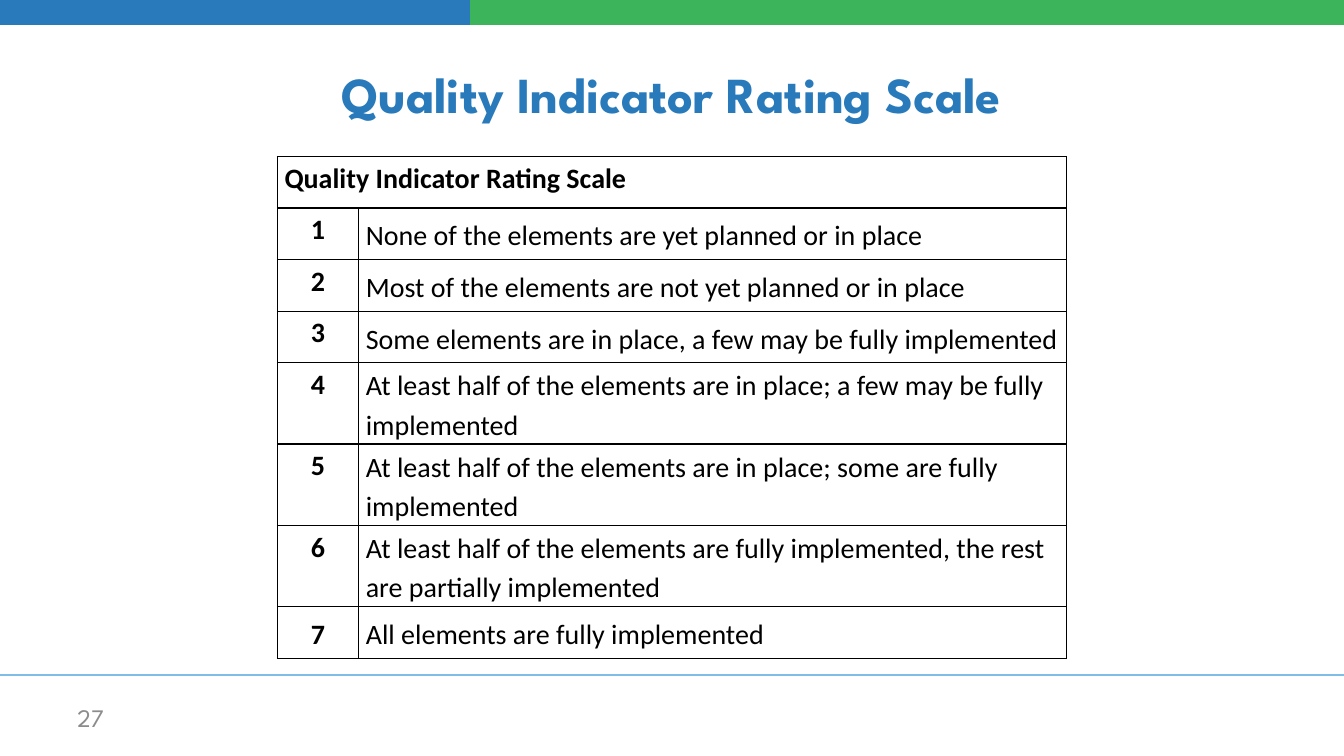
from dataclasses import dataclass

from lxml import etree
from pptx import Presentation
from pptx.dml.color import RGBColor
from pptx.enum import shapes, text
from pptx.oxml import ns
from pptx.util import Cm, Pt


@dataclass(frozen=True)
class Theme:
    blue: str = "297ABB"
    green: str = "3CB45C"
    rule: str = "7FBCE7"
    grey: str = "8C8C8C"
    ink: str = "000000"
    paper: str = "FFFFFF"
    display: str = "League Spartan"
    body: str = "Calibri"
    title_size: int = 36
    table_size: int = 20
    number_size: int = 18


THEME = Theme()
SLIDE_WIDTH, SLIDE_HEIGHT = 33.87, 19.05
HEADING = "Quality Indicator Rating Scale"
RATINGS = [
    "None of the elements are yet planned or in place",
    "Most of the elements are not yet planned or in place",
    "Some elements are in place, a few may be fully implemented",
    "At least half of the elements are in place; a few may be fully implemented",
    "At least half of the elements are in place; some are fully implemented",
    "At least half of the elements are fully implemented, the rest are partially implemented",
    "All elements are fully implemented",
]
TWO_LINE_RATINGS = (4, 5, 6)
COLUMN_WIDTHS = (2.05, 17.84)
SINGLE_ROW, DOUBLE_ROW = 1.3, 2.05


def rgb(colour):
    return RGBColor.from_string(colour)


def add_run(paragraph, words, font, size, colour, bold=False):
    run = paragraph.add_run()
    run.text = words
    run.font.name = font
    run.font.size = Pt(size)
    run.font.bold = bold
    run.font.color.rgb = rgb(colour)


def add_band(slide, left, width, colour):
    """Add a band that bleeds over the top edge of the slide."""
    band = slide.shapes.add_shape(
        shapes.MSO_SHAPE.RECTANGLE, Cm(left), Cm(-3.18), Cm(width), Cm(3.81))
    band.shadow.inherit = False
    band.fill.solid()
    band.fill.fore_color.rgb = rgb(colour)
    band.line.fill.background()


def add_rule(slide, start, end, y):
    rule = slide.shapes.add_connector(
        shapes.MSO_CONNECTOR.STRAIGHT, Cm(start), Cm(y), Cm(end), Cm(y))
    rule.line.color.rgb = rgb(THEME.rule)
    rule.line.width = Pt(1.5)
    etree.SubElement(rule._element.spPr, ns.qn("a:effectLst"))


def add_label(slide, box, words, size, colour, align, bold=False):
    frame = slide.shapes.add_textbox(*map(Cm, box)).text_frame
    frame.word_wrap = True
    frame.vertical_anchor = text.MSO_ANCHOR.MIDDLE
    frame.paragraphs[0].alignment = align
    add_run(frame.paragraphs[0], words, THEME.display, size, colour, bold)


def add_borders(cell):
    properties = cell._tc.get_or_add_tcPr()
    for side in ("lnL", "lnR", "lnT", "lnB"):
        border = etree.SubElement(properties, ns.qn(f"a:{side}"), w=str(Pt(1)))
        fill = etree.SubElement(border, ns.qn("a:solidFill"))
        etree.SubElement(fill, ns.qn("a:srgbClr"), val=THEME.ink)


def fill_cell(cell, words, bold=False, centred=False, middle=False):
    cell.margin_left = cell.margin_right = Cm(0.18)
    cell.margin_top = cell.margin_bottom = 0
    cell.vertical_anchor = text.MSO_ANCHOR.MIDDLE if middle else text.MSO_ANCHOR.TOP
    paragraph = cell.text_frame.paragraphs[0]
    paragraph.line_spacing = 1.15
    paragraph.alignment = text.PP_ALIGN.CENTER if centred else text.PP_ALIGN.LEFT
    add_run(paragraph, words, THEME.body, THEME.table_size, THEME.ink, bold)


def add_rating_table(slide, left, top):
    heights = [DOUBLE_ROW if score in TWO_LINE_RATINGS else SINGLE_ROW
               for score in range(len(RATINGS) + 1)]
    scale = slide.shapes.add_table(
        len(heights), len(COLUMN_WIDTHS), Cm(left), Cm(top),
        Cm(sum(COLUMN_WIDTHS)), Cm(sum(heights))).table
    scale.first_row = scale.horz_banding = False
    for column, width in zip(scale.columns, COLUMN_WIDTHS):
        column.width = Cm(width)
    for row, height in zip(scale.rows, heights):
        row.height = Cm(height)
    for cell in scale.iter_cells():
        add_borders(cell)
        cell.fill.solid()
        cell.fill.fore_color.rgb = rgb(THEME.paper)

    # Heading row across both columns
    scale.cell(0, 0).merge(scale.cell(0, 1))
    fill_cell(scale.cell(0, 0), HEADING, bold=True)

    # Score and meaning; only the last score is centred vertically
    for score, meaning in enumerate(RATINGS, start=1):
        fill_cell(scale.cell(score, 0), str(score), bold=True, centred=True,
                  middle=score == len(RATINGS))
        fill_cell(scale.cell(score, 1), meaning, middle=True)


def main():
    deck = Presentation()
    deck.slide_width, deck.slide_height = Cm(SLIDE_WIDTH), Cm(SLIDE_HEIGHT)
    slide = deck.slides.add_slide(deck.slide_layouts[6])

    # Top bands, green over blue, and footer rule
    green_start = 11.85
    add_band(slide, 0, SLIDE_WIDTH / 2, THEME.blue)
    add_band(slide, green_start, SLIDE_WIDTH - green_start, THEME.green)
    add_rule(slide, -0.43, 34.09, 17)

    # Page number and title
    add_label(slide, (1.7, 17.58, 7.9, 1.02), "27", THEME.number_size,
              THEME.grey, text.PP_ALIGN.LEFT)
    add_label(slide, (1.69, 0.76, 30.48, 3.18), HEADING, THEME.title_size,
              THEME.blue, text.PP_ALIGN.CENTER, bold=True)

    # Rating scale
    add_rating_table(slide, 6.99, 3.94)
    deck.save("out.pptx")


if __name__ == "__main__":
    main()
